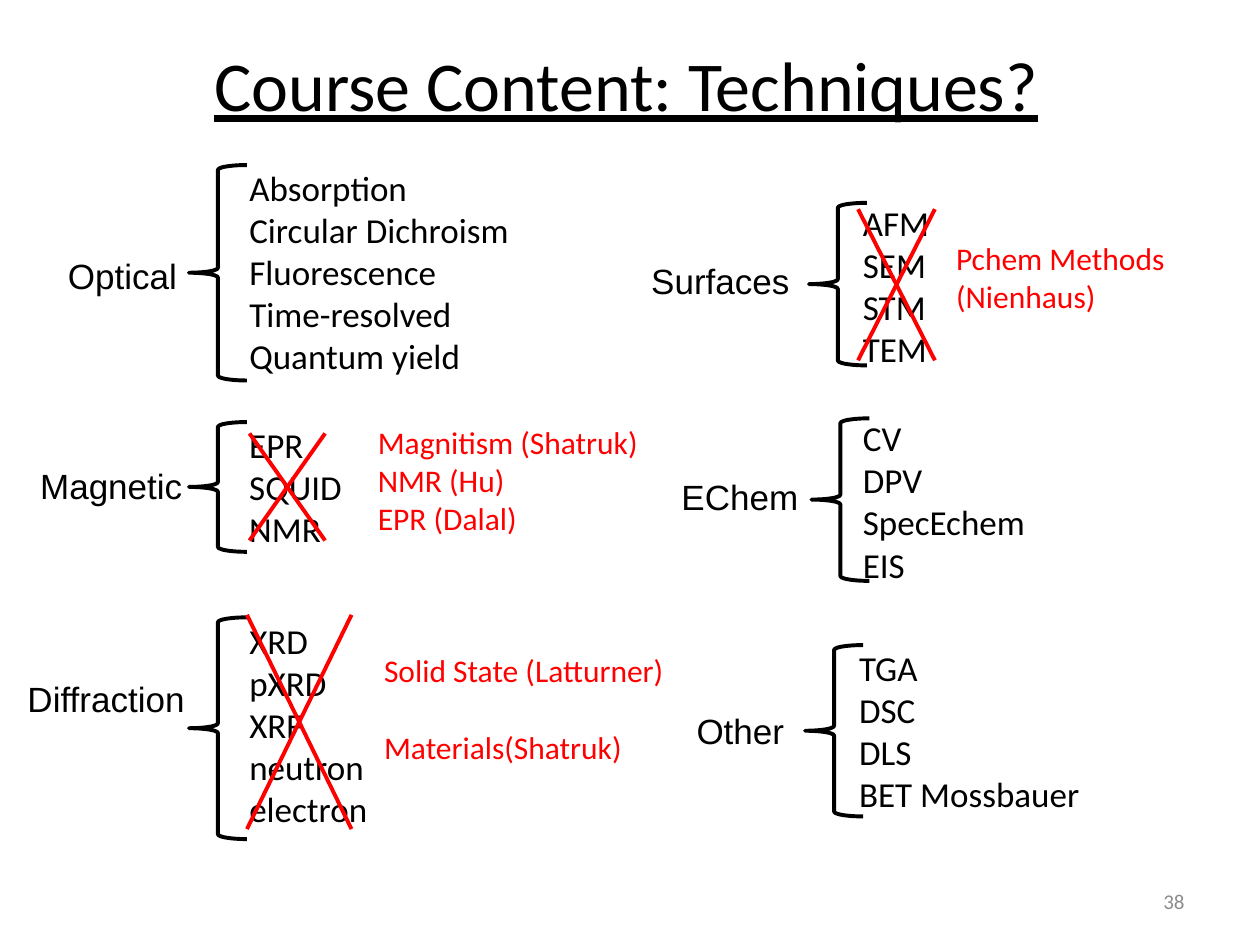
from lxml import etree
from pptx import Presentation
from pptx.dml.color import RGBColor
from pptx.enum.shapes import MSO_CONNECTOR, MSO_SHAPE
from pptx.enum.text import MSO_ANCHOR, MSO_AUTO_SIZE, PP_ALIGN
from pptx.oxml.ns import qn
from pptx.util import Emu, Pt

STRAIGHT = MSO_CONNECTOR.STRAIGHT
LEFT_BRACE = MSO_SHAPE.LEFT_BRACE
TOP, MIDDLE = MSO_ANCHOR.TOP, MSO_ANCHOR.MIDDLE
NO_AUTOFIT = MSO_AUTO_SIZE.NONE
LEFT, CENTER, RIGHT, JUSTIFY = PP_ALIGN.LEFT, PP_ALIGN.CENTER, PP_ALIGN.RIGHT, PP_ALIGN.JUSTIFY

EMU_PER_PX = 9144
BLACK, RED, GREY = "000000", "FF0000", "8C8C8C"
BRACE_WIDTH = 46
LABEL_HEIGHT = 44

# Each box is the brace; other boxes are offsets from its top left corner.
GROUPS = [
    {"box": (150, 131, 171), "label": ("Optical", -106, 66, 122),
     "list": (38, -4, 228, 178),
     "techniques": ["Absorption", "Circular Dichroism", "Fluorescence",
                    "Time-resolved", "Quantum yield"]},
    {"box": (150, 335, 103), "label": ("Magnetic", -128, 28, 136),
     "list": (38, -4, 94, 111), "techniques": ["EPR", "SQUID", "NMR"],
     "cross": (48, 9, 60, 85), "note": (140, -4, 268, 101),
     "courses": ["Magnitism (Shatruk)", "NMR (Hu)", "EPR (Dalal)"]},
    {"box": (150, 490, 176), "label": ("Diffraction", -138, 42, 146),
     "list": (38, -3, 115, 178),
     "techniques": ["XRD", "pXRD", "XRF", "neutron", "electron"],
     "cross": (46, -2, 83, 170), "note": (145, 22, 266, 101),
     "courses": ["Solid State (Latturner)", "Materials(Shatruk)"], "gap": 22},
    {"box": (642, 161, 129), "label": ("Surfaces", -135, 40, 146),
     "list": (33, -6, 73, 145), "techniques": ["AFM", "SEM", "STM", "TEM"],
     "cross": (39, 5, 61, 120), "note": (107, 24, 268, 71),
     "courses": ["Pchem Methods (Nienhaus)"]},
    {"box": (644, 332, 129), "label": ("EChem", -113, 40, 146),
     "list": (31, -6, 150, 145), "techniques": ["CV", "DPV", "SpecEchem", "EIS"]},
    {"box": (639, 512, 136), "label": ("Other", -96, 46, 146),
     "list": (33, -4, 197, 145), "techniques": ["TGA", "DSC", "DLS", "BET Mossbauer"]},
]


def px(*lengths):
    return [Emu(length * EMU_PER_PX) for length in lengths]


def rgb(code):
    return RGBColor.from_string(code)


def set_text(frame, lines, size, font="Calibri", color=BLACK, align=LEFT,
             anchor=TOP, wrap=True, gap=0, underline=None):
    frame.text = "\n".join(lines)
    frame.word_wrap = wrap
    frame.auto_size = NO_AUTOFIT
    frame.vertical_anchor = anchor
    for index, paragraph in enumerate(frame.paragraphs):
        paragraph.alignment = align
        paragraph.space_before = Pt(gap if index else 0)
        for run in paragraph.runs:
            run.font.size = Pt(size)
            run.font.name = font
            run.font.color.rgb = rgb(color)
            run.font.underline = underline


def add_text(slide, box, lines, size, **style):
    set_text(slide.shapes.add_textbox(*px(*box)).text_frame, lines, size, **style)


def add_title(slide, box, heading):
    title = slide.shapes.title
    title.left, title.top, title.width, title.height = px(*box)
    set_text(title.text_frame, [heading], 40, align=CENTER, underline=True)


def add_brace(slide, box):
    brace = slide.shapes.add_shape(LEFT_BRACE, *px(*box))
    brace.shadow.inherit = False
    brace.fill.background()
    brace.line.color.rgb = rgb(BLACK)
    brace.line.width = Pt(2.25)


def add_cross(slide, box):
    left, top, width, height = box
    right, bottom = left + width, top + height
    cross = slide.shapes.add_group_shape()
    for start, end in ((top, bottom), (bottom, top)):
        stroke = cross.shapes.add_connector(STRAIGHT, *px(left, start, right, end))
        stroke.line.color.rgb = rgb(RED)
        stroke.line.width = Pt(2.25)
        etree.SubElement(stroke._element.spPr, qn("a:effectLst"))


def add_group(slide, group):
    left, top, height = group["box"]

    def place(offset):
        x, y, *extent = offset
        return (left + x, top + y, *extent)

    name, x, y, width = group["label"]
    add_text(slide, place((x, y, width, LABEL_HEIGHT)), [name], 20,
             font="Arial", align=JUSTIFY, anchor=MIDDLE)
    add_brace(slide, (left, top, BRACE_WIDTH, height))
    add_text(slide, place(group["list"]), group["techniques"], 20, wrap=False)
    if "cross" in group:
        add_cross(slide, place(group["cross"]))
        add_text(slide, place(group["note"]), group["courses"], 18,
                 color=RED, gap=group.get("gap", 0))


def main():
    deck = Presentation()
    deck.slide_width, deck.slide_height = px(1000, 750)
    slide = deck.slides.add_slide(deck.slide_layouts[5])
    add_title(slide, (115, 28, 764, 77), "Course Content: Techniques?")
    for group in GROUPS:
        add_group(slide, group)
    add_text(slide, (717, 695, 233, 40), ["38"], 12, color=GREY,
             align=RIGHT, anchor=MIDDLE)
    deck.save("out.pptx")


if __name__ == "__main__":
    main()
